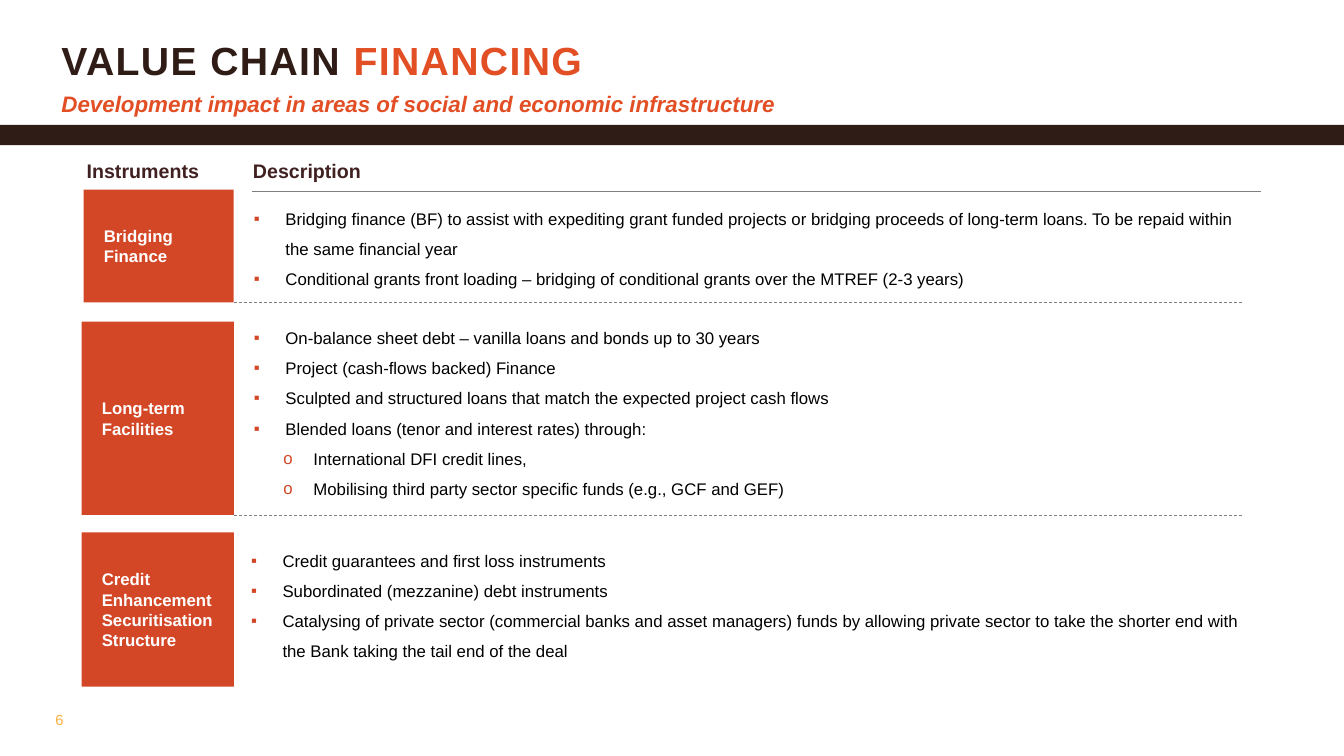
from lxml.etree import SubElement
from pptx import Presentation
from pptx.dml.color import RGBColor
from pptx.enum.dml import MSO_LINE
from pptx.enum.shapes import MSO_CONNECTOR, MSO_SHAPE
from pptx.enum.text import MSO_ANCHOR, MSO_AUTO_SIZE, PP_ALIGN
from pptx.oxml.ns import qn
from pptx.util import Pt

BROWN, ORANGE, RUST, MAROON = "301C16", "E24F25", "D34727", "402020"
GREY, AMBER, BLACK, WHITE = "808080", "FBB040", "000000", "FFFFFF"
SLIDE_WIDTH, SLIDE_HEIGHT = 960, 540
LABEL_RIGHT, RULE_LENGTH = 167, 720.8
LEVELS = [("▪", 22.5, -22.5), ("o", 42.5, -21.5)]

INSTRUMENTS = [
    ("Bridging Finance", (59.8, 135.4, 107.2, 80.6), (181.4, 141.8), [
        (0, "Bridging finance (BF) to assist with expediting grant funded projects or bridging "
            "proceeds of long-term loans. To be repaid within the same financial year"),
        (0, "Conditional grants front loading – bridging of conditional grants over the MTREF (2-3 years)"),
    ]),
    ("Long-term Facilities", (58.3, 229.7, 108.7, 138.2), (181.4, 226.8), [
        (0, "On-balance sheet debt – vanilla loans and bonds up to 30 years"),
        (0, "Project (cash-flows backed) Finance"),
        (0, "Sculpted and structured loans that match the expected project cash flows"),
        (0, "Blended loans (tenor and interest rates) through:"),
        (1, "International DFI credit lines,"),
        (1, "Mobilising third party sector specific funds (e.g., GCF and GEF)"),
    ]),
    ("Credit Enhancement Securitisation Structure", (58.3, 380.2, 108.7, 110.2), (179.3, 385.9), [
        (0, "Credit guarantees and first loss instruments"),
        (0, "Subordinated (mezzanine) debt instruments"),
        (0, "Catalysing of private sector (commercial banks and asset managers) funds by allowing "
            "private sector to take the shorter end with the Bank taking the tail end of the deal"),
    ]),
]


def color(value):
    """Turn a hex string into a colour."""
    return RGBColor.from_string(value)


def format_run(span, size, ink, bold=False, italic=False):
    """Set the font of one run."""
    span.font.name = "Arial"
    span.font.size = Pt(size)
    span.font.bold = bold
    span.font.italic = italic
    span.font.color.rgb = color(ink)


def set_frame(frame, anchor, insets):
    """Set wrapping, anchor and insets of a text frame."""
    frame.word_wrap = True
    frame.auto_size = MSO_AUTO_SIZE.NONE
    frame.vertical_anchor = anchor
    frame.margin_left, frame.margin_top, frame.margin_right, frame.margin_bottom = map(Pt, insets)


def add_text(page, box, text, size, ink, anchor=MSO_ANCHOR.BOTTOM, insets=(0, 0, 0, 0), **style):
    """Add a one-paragraph text box."""
    frame = page.shapes.add_textbox(*map(Pt, box)).text_frame
    set_frame(frame, anchor, insets)
    frame.text = text
    format_run(frame.paragraphs[0].runs[0], size, ink, **style)


def add_block(page, box, fill):
    """Add a plain filled rectangle."""
    block = page.shapes.add_shape(MSO_SHAPE.RECTANGLE, *map(Pt, box))
    block.shadow.inherit = False
    block.fill.solid()
    block.fill.fore_color.rgb = color(fill)
    block.line.fill.background()
    return block


def add_rule(page, left, top, length, dashed=False):
    """Add a thin horizontal rule."""
    rule = page.shapes.add_connector(
        MSO_CONNECTOR.STRAIGHT, Pt(left), Pt(top), Pt(left + length), Pt(top))
    rule.line.color.rgb = color(GREY)
    rule.line.width = Pt(0.5)
    if dashed:
        rule.line.dash_style = MSO_LINE.DASH
    SubElement(rule._element.spPr, qn("a:effectLst"))


def add_bullet(para, level):
    """Give a paragraph the bullet and indents of its level."""
    mark, margin, indent = LEVELS[level]
    para.level = level
    para.line_spacing = 1.5
    properties = para._p.get_or_add_pPr()
    properties.set("marL", str(Pt(margin)))
    properties.set("indent", str(Pt(indent)))
    ink = SubElement(properties, qn("a:buClr"))
    SubElement(ink, qn("a:srgbClr"), val=RUST)
    SubElement(properties, qn("a:buFont"), typeface="Arial")
    SubElement(properties, qn("a:buChar"), char=mark)


def add_header(page, box):
    """Place the title, the subtitle and the band below them."""
    left, top, width, height = box
    title = page.shapes.title
    title.left, title.top, title.width, title.height = map(Pt, (left + 38.2, top + 25.9, 774.7, 36.7))
    set_frame(title.text_frame, MSO_ANCHOR.BOTTOM, (5.7, 2.9, 5.7, 2.9))
    para = title.text_frame.paragraphs[0]
    para.alignment = PP_ALIGN.LEFT
    para.line_spacing = 0.9
    for text, ink in (("VALUE CHAIN ", BROWN), ("FINANCING", ORANGE)):
        span = para.add_run()
        span.text = text
        format_run(span, 28, ink, bold=True)
        span.font._element.set("spc", "100")
    add_text(page, (left + 38.2, top + 64.8, 878.4, 21.6),
             "Development impact in areas of social and economic infrastructure",
             16, ORANGE, insets=(5.7, 2.9, 5.7, 2.9), bold=True, italic=True)
    add_block(page, (left, top + height - 14.4, width, 14.4), BROWN)


def add_column_heads(page, box):
    """Place the two column heads and the rule under the second."""
    left, top, width, height = box
    add_text(page, (left, top, 121.7, height), "Instruments", 14, MAROON, bold=True)
    add_text(page, (left + 118.8, top, 193.7, height), "Description", 14, MAROON, bold=True)
    add_rule(page, left + 118.1, top + height + 6.5, width - 118.1)


def add_label(page, box, name):
    """Place the coloured label of one instrument."""
    frame = add_block(page, box, RUST).text_frame
    set_frame(frame, MSO_ANCHOR.MIDDLE, (14.4, 5.7, 5.7, 5.7))
    frame.text = name
    frame.paragraphs[0].alignment = PP_ALIGN.LEFT
    format_run(frame.paragraphs[0].runs[0], 12, WHITE, bold=True)


def add_description(page, box, points):
    """Place the bullet list of one instrument."""
    frame = page.shapes.add_textbox(*map(Pt, box)).text_frame
    set_frame(frame, MSO_ANCHOR.TOP, (0, 0, 0, 0))
    frame.text = "\n".join(text for _, text in points)
    for para, (level, _) in zip(frame.paragraphs, points):
        add_bullet(para, level)
        format_run(para.runs[0], 12, BLACK)


def add_instruments(page, instruments, right):
    """Place each instrument, with a dashed rule between neighbours."""
    for index, (name, box, (left, top), points) in enumerate(instruments):
        bottom = box[1] + box[3]
        add_label(page, box, name)
        add_description(page, (left, top, right - left, bottom - top), points)
        if index < len(instruments) - 1:
            add_rule(page, LABEL_RIGHT, bottom, RULE_LENGTH, dashed=True)


def main():
    """Build the slide and save the deck."""
    deck = Presentation()
    deck.slide_width, deck.slide_height = Pt(SLIDE_WIDTH), Pt(SLIDE_HEIGHT)
    page = deck.slides.add_slide(deck.slide_layouts[5])
    add_header(page, (0, 0, SLIDE_WIDTH, 103.7))
    add_column_heads(page, (61.9, 113, 838.8, 17.3))
    add_instruments(page, INSTRUMENTS, 900)
    add_text(page, (0, 499.7, 87.1, 28.8), "6", 10.5, AMBER,
             anchor=MSO_ANCHOR.MIDDLE, insets=(39.6, 3.6, 20.2, 3.6))
    deck.save("out.pptx")


if __name__ == "__main__":
    main()
